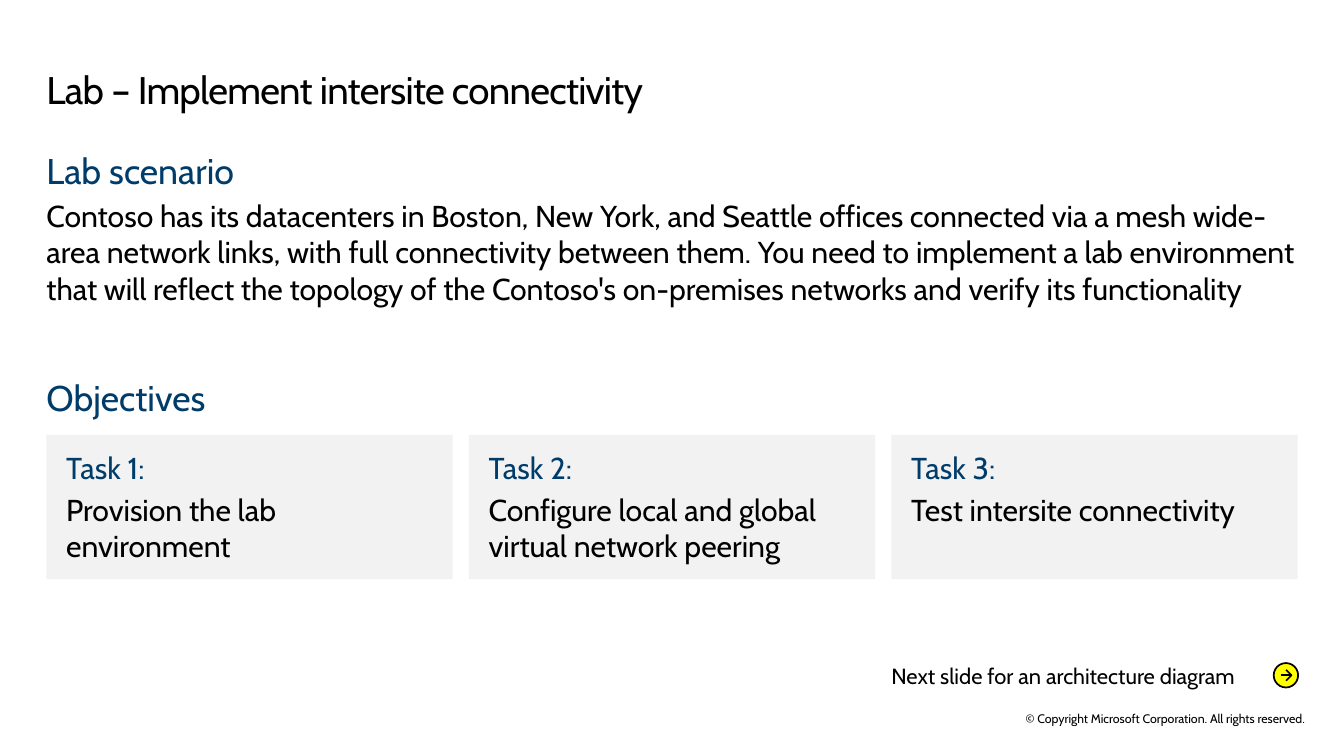
import dataclasses
import typing

import pptx
import pptx.dml.color
import pptx.enum.shapes
import pptx.enum.text
import pptx.slide
import pptx.text.text
import pptx.util
from lxml import etree

Pt = pptx.util.Pt
RGBColor = pptx.dml.color.RGBColor
Anchor = pptx.enum.text.MSO_ANCHOR
Align = pptx.enum.text.PP_ALIGN
ShapeType = pptx.enum.shapes.MSO_SHAPE


@dataclasses.dataclass(frozen=True)
class Theme:
    font: str = "Cabin"
    ink: RGBColor = RGBColor(0x00, 0x00, 0x00)
    heading: RGBColor = RGBColor(0x00, 0x3C, 0x6A)
    card: RGBColor = RGBColor(0xF2, 0xF2, 0xF2)
    badge: RGBColor = RGBColor(0xFF, 0xFF, 0x00)
    title_size: float = 28
    heading_size: float = 26
    body_size: float = 22
    note_size: float = 16
    footer_size: float = 9


THEME = Theme()


@dataclasses.dataclass(frozen=True)
class Line:
    text: str
    size: float
    color: RGBColor = THEME.ink
    space_before: float = 0
    line_spacing: float = 0
    tracking: float = 0
    align: Align = Align.LEFT


@dataclasses.dataclass(frozen=True)
class Box:
    left: float
    top: float
    width: float
    height: float

    def lengths(self) -> list[int]:
        return [Pt(value) for value in dataclasses.astuple(self)]


@dataclasses.dataclass(frozen=True)
class TextBlock:
    box: Box
    lines: tuple[Line, ...]
    anchor: Anchor = Anchor.TOP


LEFT = 33.84
CONTENT_WIDTH = 912.24
CARD = Box(LEFT, 316.8, 295.92, 105.12)
CARD_PITCH = 307.8
BADGE = Box(928, 483.1, 17.8, 17.8)

TASKS = (
    "Provision the lab environment",
    "Configure local and global virtual network peering",
    "Test intersite connectivity",
)

TEXT_BLOCKS = (
    # Footer
    TextBlock(
        Box(718.56, 518.4, 260.64, 10.8),
        (Line("© Copyright Microsoft Corporation. All rights reserved.",
              THEME.footer_size, align=Align.CENTER),),
        Anchor.MIDDLE,
    ),
    # Title
    TextBlock(
        Box(LEFT, 49.68, 910.8, 32.4),
        (Line("Lab – Implement intersite connectivity",
              THEME.title_size, line_spacing=32, tracking=-0.5),),
    ),
    # Scenario
    TextBlock(
        Box(LEFT, 108.72, CONTENT_WIDTH, 141.84),
        (
            Line("Lab scenario", THEME.heading_size, THEME.heading),
            Line("Contoso has its datacenters in Boston, New York, and Seattle "
                 "offices connected via a mesh wide-area network links, with full "
                 "connectivity between them. You need to implement a lab "
                 "environment that will reflect the topology of the Contoso's "
                 "on-premises networks and verify its functionality",
                 THEME.body_size, space_before=4),
        ),
    ),
    # Objectives heading
    TextBlock(
        Box(LEFT, 273.6, CONTENT_WIDTH, 31.68),
        (Line("Objectives", THEME.heading_size, THEME.heading),),
    ),
    # Pointer to the next slide
    TextBlock(
        Box(LEFT + 2 * CARD_PITCH, 482.4, 268.56, 19.44),
        (Line("Next slide for an architecture diagram", THEME.note_size),),
    ),
)


def write_lines(frame: pptx.text.text.TextFrame, lines: typing.Sequence[Line],
                anchor: Anchor = Anchor.TOP, side: float = 0, end: float = 0) -> None:
    frame.word_wrap = True
    frame.vertical_anchor = anchor
    frame.margin_left = frame.margin_right = Pt(side)
    frame.margin_top = frame.margin_bottom = Pt(end)
    for index, line in enumerate(lines):
        paragraph = frame.add_paragraph() if index else frame.paragraphs[0]
        paragraph.alignment = line.align
        if line.space_before:
            paragraph.space_before = Pt(line.space_before)
        if line.line_spacing:
            paragraph.line_spacing = Pt(line.line_spacing)
        run = paragraph.add_run()
        run.text = line.text
        run.font.name = THEME.font
        run.font.size = Pt(line.size)
        run.font.color.rgb = line.color
        if line.tracking:
            etree.ElementBase.set(run.font._element, "spc", str(round(line.tracking * 100)))


def add_text_block(slide: pptx.slide.Slide, block: TextBlock) -> None:
    shape = slide.shapes.add_textbox(*block.box.lengths())
    write_lines(shape.text_frame, block.lines, block.anchor)


def add_task_card(slide: pptx.slide.Slide, index: int, task: str) -> None:
    box = dataclasses.replace(CARD, left=CARD.left + index * CARD_PITCH)
    shape = slide.shapes.add_shape(ShapeType.RECTANGLE, *box.lengths())
    shape.shadow.inherit = False
    shape.fill.solid()
    shape.fill.fore_color.rgb = THEME.card
    shape.line.fill.background()
    lines = (
        Line(f"Task {index + 1}:", THEME.body_size, THEME.heading),
        Line(task, THEME.body_size, space_before=4),
    )
    write_lines(shape.text_frame, lines, side=14.4, end=10.8)


def add_next_badge(slide: pptx.slide.Slide) -> None:
    circle = slide.shapes.add_shape(ShapeType.OVAL, *BADGE.lengths())
    circle.fill.solid()
    circle.fill.fore_color.rgb = THEME.badge

    # Open arrow: head, then shaft
    center_x = BADGE.left + BADGE.width / 2
    center_y = BADGE.top + BADGE.height / 2
    reach = 4.2
    tip = (center_x + reach, center_y)
    builder = slide.shapes.build_freeform(center_x, center_y + reach, scale=Pt(1))
    builder.add_line_segments([tip, (center_x, center_y - reach)], close=False)
    builder.move_to(*tip)
    builder.add_line_segments([(center_x - reach, center_y)], close=False)
    arrow = builder.convert_to_shape()
    arrow.fill.background()

    for shape in (circle, arrow):
        shape.shadow.inherit = False
        shape.line.color.rgb = THEME.ink
        shape.line.width = Pt(1.25)


def main() -> None:
    presentation = pptx.Presentation()
    presentation.slide_width = Pt(979.2)
    presentation.slide_height = Pt(550.8)
    slide = presentation.slides.add_slide(presentation.slide_layouts[6])

    for block in TEXT_BLOCKS:
        add_text_block(slide, block)
    for index, task in enumerate(TASKS):
        add_task_card(slide, index, task)
    add_next_badge(slide)

    presentation.save("out.pptx")


if __name__ == "__main__":
    main()
